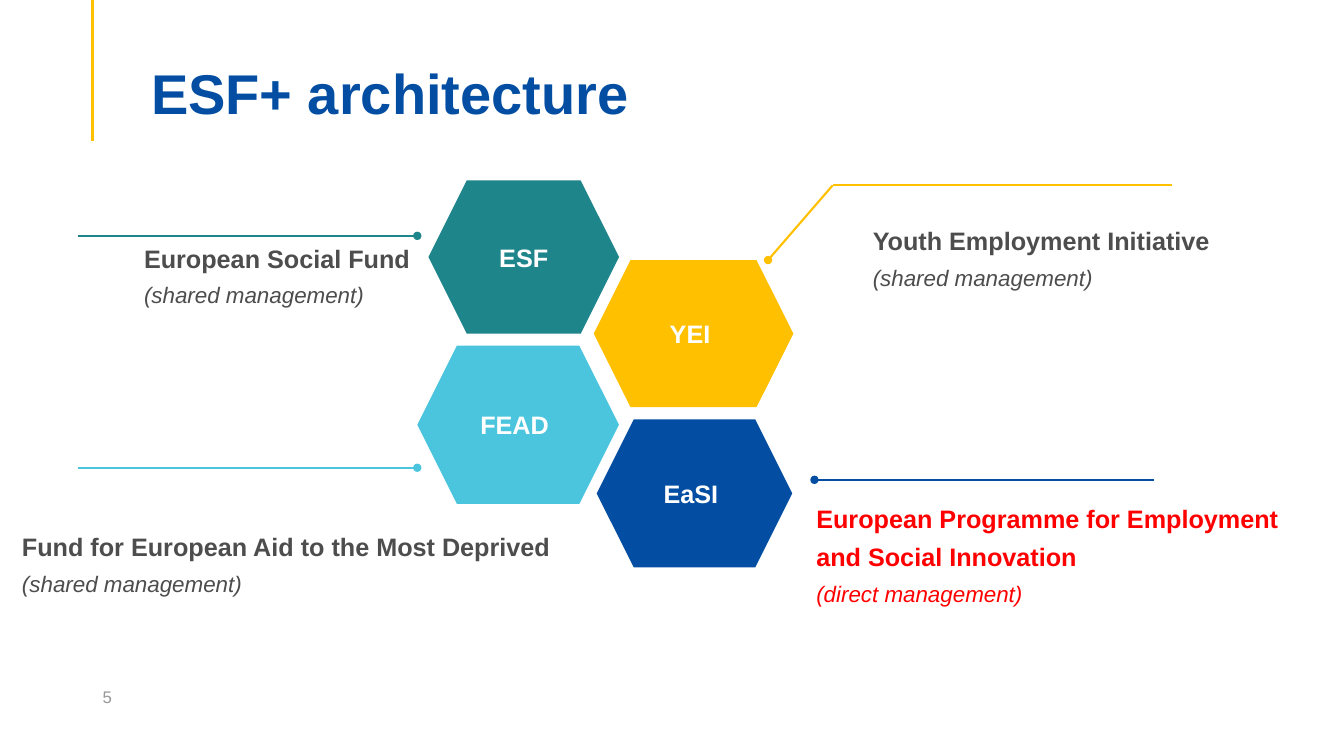
from pptx import Presentation
from pptx.dml.color import RGBColor
from pptx.enum.shapes import MSO_CONNECTOR as Link, MSO_SHAPE as Shape
from pptx.enum.text import MSO_ANCHOR as Anchor, MSO_AUTO_SIZE as Auto, PP_ALIGN as Align
from pptx.oxml.ns import qn
from pptx.util import Inches, Pt
from lxml.etree import SubElement

TEAL = RGBColor(0x1E, 0x85, 0x8B)
GOLD = RGBColor(0xFF, 0xC0, 0x00)
SKY = RGBColor(0x4B, 0xC5, 0xDE)
BLUE = RGBColor(0x03, 0x4E, 0xA2)
GREY = RGBColor(0x4D, 0x4D, 0x4D)
PALE = RGBColor(0x97, 0x97, 0x97)
RED = RGBColor(0xFF, 0x00, 0x00)
WHITE = RGBColor(0xFF, 0xFF, 0xFF)

# Content; all places are percent of the slide's width and height
TITLE = "ESF+ architecture"
PAGE = "5"
CELLS = [  # text, fill, box
    ("ESF", TEAL, (31.88, 23.87, 14.18, 20.27)),
    ("YEI ", GOLD, (44.18, 34.4, 14.85, 19.47)),
    ("FEAD ", SKY, (31.05, 45.73, 15, 20.93)),
    ("EaSI ", BLUE, (44.4, 55.47, 14.55, 19.6)),
]
REACH = 25.28  # shared length of the level leader lines
LEADS = [  # colour, inner end, direction outwards, dot at the inner end
    (BLUE, (60.6, 63.47), 1, True),
    (TEAL, (31.05, 31.2), -1, True),
    (SKY, (31.05, 61.87), -1, True),
    (GOLD, (61.95, 24.53), 1, False),
]
BEND = ((61.95, 24.53), (57.15, 34.4))
SHARED = "(shared management)"
NOTES = [  # bold lines, italic line, colour, box, wraps
    (["European Social Fund"], SHARED, GREY, (9.98, 31.47, 22.43, 14.53), True),
    (["Fund for European Aid to the Most Deprived"], SHARED, GREY,
     (0.9, 69.6, 43.5, 14.13), True),
    (["Youth Employment Initiative"], SHARED, GREY, (64.2, 29.2, 28.35, 10.13), True),
    (["European Programme for Employment", "and Social Innovation"],
     "(direct management)", RED, (60, 65.87, 36.75, 15.2), False),
]

deck = Presentation()
deck.slide_width, deck.slide_height = Inches(13.33), Inches(7.5)
slide = deck.slides.add_slide(deck.slide_layouts[6])
shapes = slide.shapes


def place(*vals):
    """Turn percent pairs into slide lengths."""
    sides = (deck.slide_width, deck.slide_height)
    return [round(val * sides[i % 2] / 100) for i, val in enumerate(vals)]


def style(para, size, color, **more):
    form = {"name": "Arial", "size": Pt(size), **more}
    for key, val in form.items():
        setattr(para.font, key, val)
    para.font.color.rgb = color


def line(start, end, color, width=1.5, dot=False):
    link = shapes.add_connector(Link.STRAIGHT, *place(*start, *end))
    link.line.color.rgb = color
    link.line.width = Pt(width)
    if dot:
        SubElement(link.line._get_or_add_ln(), qn("a:tailEnd"), type="oval")
    SubElement(link._element.spPr, qn("a:effectLst"))


def write(box, rows, **frame):
    """Add a text box; each row is text, size, colour and font format."""
    text = shapes.add_textbox(*place(*box)).text_frame
    for key, val in {"word_wrap": True, **frame}.items():
        setattr(text, key, val)
    for i, (words, size, color, form) in enumerate(rows):
        para = text.add_paragraph() if i else text.paragraphs[0]
        para.text = words
        if i < len(rows) - 1:
            para.space_after = Pt(6)
        style(para, size, color, **form)


# Title and its rule
line((6.9, 0), (6.9, 18.67), GOLD, 2.25)
write((10.5, 5.2, 86.25, 11.47), [(TITLE, 40, BLUE, {"bold": True})],
      vertical_anchor=Anchor.BOTTOM, margin_bottom=0)

# Honeycomb
for name, fill, box in CELLS:
    cell = shapes.add_shape(Shape.HEXAGON, *place(*box))
    cell.shadow.inherit = False
    cell.fill.solid()
    cell.fill.fore_color.rgb = fill
    cell.line.fill.background()
    cell.text_frame.vertical_anchor = Anchor.MIDDLE
    para = cell.text_frame.paragraphs[0]
    para.text, para.alignment = name, Align.CENTER
    style(para, 18, WHITE, bold=True)

# Leader lines
for color, (x, y), way, dot in LEADS:
    line((x + way * REACH, y), (x, y), color, dot=dot)
line(*BEND, GOLD, dot=True)

# Fund names
for heads, mode, color, box, wrap in NOTES:
    rows = [(head, 18, color, {"bold": True}) for head in heads]
    rows.append((mode, 16, color, {"italic": True}))
    write(box, rows, word_wrap=wrap, auto_size=Auto.SHAPE_TO_FIT_TEXT)

# Page number
write((6.9, 89.47, 22.5, 5.33), [(PAGE, 12, PALE, {})], vertical_anchor=Anchor.MIDDLE)

deck.save("out.pptx")
